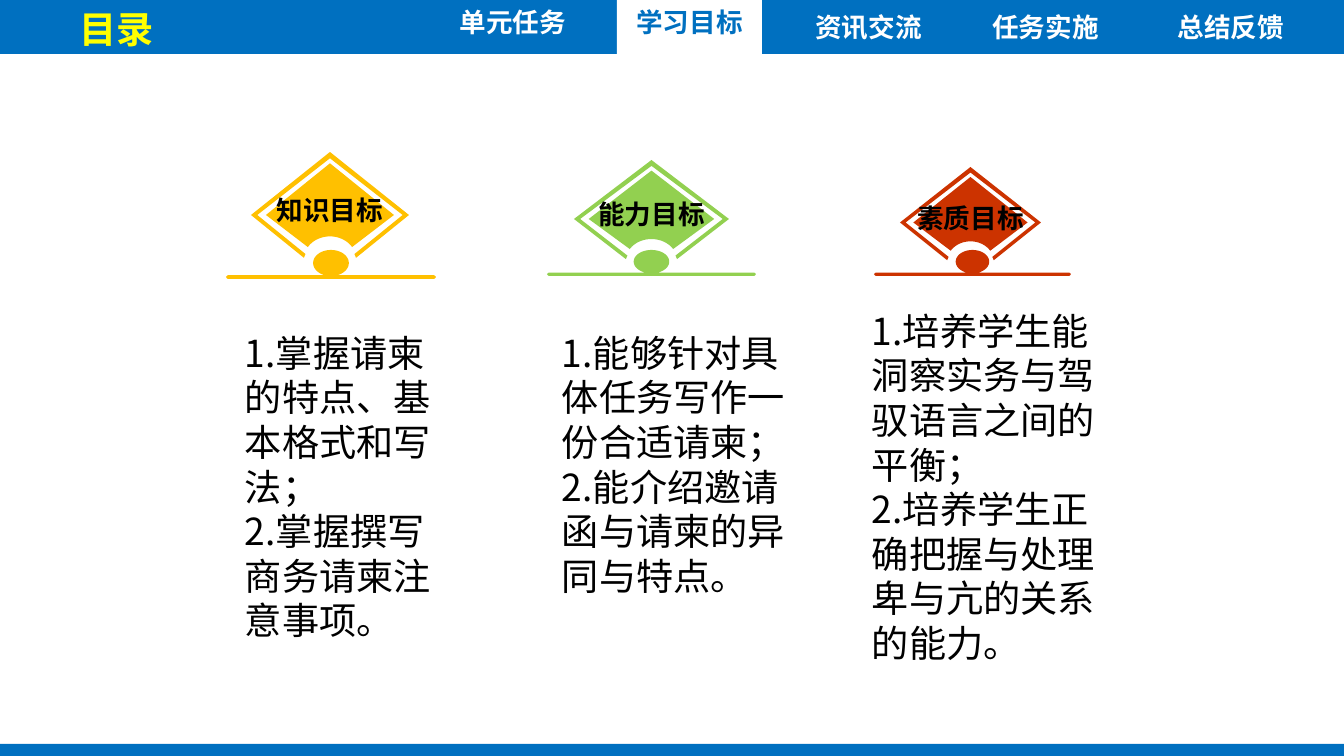
from math import cos, radians, sin

from lxml.etree import SubElement
from pptx import Presentation
from pptx.dml.color import RGBColor
from pptx.enum.shapes import MSO_SHAPE
from pptx.enum.text import MSO_ANCHOR, PP_ALIGN
from pptx.oxml.ns import qn
from pptx.util import Pt

PX = 9565  # EMU in one px
WIDTH, HEIGHT = 1344, 756

BLUE = RGBColor(0x00, 0x70, 0xC0)
WHITE = RGBColor(0xFF, 0xFF, 0xFF)
BLACK = RGBColor(0x00, 0x00, 0x00)
YELLOW = RGBColor(0xFF, 0xFF, 0x00)
GOLD = RGBColor(0xFF, 0xC0, 0x00)
GREEN = RGBColor(0x92, 0xD0, 0x50)
RED = RGBColor(0xCC, 0x33, 0x00)

LATIN, HAN = "Arial", "Noto Sans CJK SC"
LABEL = {"name": LATIN, "size": Pt(20), "bold": True}
TITLE = {"name": HAN, "size": Pt(28), "bold": True}
BODY = {"name": HAN, "size": Pt(28), "bold": False}
PAD = (10, 5, 10, 5)


def arc(mid, rx, ry, first, last, step):
    """Points on an ellipse centred at (0, mid), angles in degrees."""
    angles = map(radians, range(first, last, step))
    return [(rx * cos(a), mid + ry * sin(a)) for a in angles]


def mirror(points):
    """Points followed by their reflection in the vertical axis."""
    return points + [(-x, y) for x, y in reversed(points)]


# Outlines: x runs from -1 to 1 about the centre, y from 0 to 1 downwards.
FOOT = [(0, 1), (0, 1)]
CORE = [(0, 0.09), (0.81, 0.5), *arc(0.85, 0.33, 0.18, -32, -149, -4),
        (-0.81, 0.5)]
FRAME = [(0, 0), (1, 0.5), (0.33, 0.84), (0.31, 0.81), (0.92, 0.5),
         (0, 0.05), (-0.92, 0.5), (-0.31, 0.81), (-0.33, 0.84), (-1, 0.5)]
BADGE = [FOOT, CORE, FRAME]
BAR = mirror([(0.98, 0.87), (0.99, 0.89), (1, 0.93), (0.99, 0.98), (0.98, 1)])
STAND = [BAR + arc(0.45, 0.17, 0.45, -249, 70, 6)]


class Board:
    def __init__(self, deck):
        self.shapes = deck.slides.add_slide(deck.slide_layouts[6]).shapes

    def paint(self, shape, color):
        shape.shadow.inherit = False
        shape.fill.solid()
        shape.fill.fore_color.rgb = color
        shape.line.fill.background()
        return shape

    def bar(self, box, color):
        place = [v * PX for v in box]
        shape = self.shapes.add_shape(MSO_SHAPE.RECTANGLE, *place)
        return self.paint(shape, color)

    def emblem(self, box, loops, color):
        """Draw unit outlines stretched to fill the box."""
        left, top, wide, high = box

        def fit(loop):
            return [(round((left + wide * (1 + x) / 2) * PX),
                     round((top + high * y) * PX)) for x, y in loop]

        first, *rest = map(fit, loops)
        pen = self.shapes.build_freeform(*first[0], scale=1.0)
        pen.add_line_segments(first[1:], close=True)
        for loop in rest:
            pen.move_to(*loop[0])
            pen.add_line_segments(loop[1:], close=True)
        return self.paint(pen.convert_to_shape(), color)

    def box(self, box):
        return self.shapes.add_textbox(*[v * PX for v in box])

    def text(self, shape, lines, style, color, align=PP_ALIGN.LEFT,
             anchor=MSO_ANCHOR.MIDDLE, pad=PAD, space=None):
        frame = shape.text_frame
        sides = ("left", "top", "right", "bottom")
        form = {f"margin_{s}": v * PX for s, v in zip(sides, pad)}
        form |= {"word_wrap": True, "vertical_anchor": anchor}
        for key, value in form.items():
            setattr(frame, key, value)
        for i, line in enumerate(lines):
            para = frame.add_paragraph() if i else frame.paragraphs[0]
            para.alignment, para.line_spacing = align, space
            run = para.add_run()
            run.text = line
            for key, value in style.items():
                setattr(run.font, key, value)
            run.font.color.rgb = color
            props = run._r.get_or_add_rPr()
            SubElement(props, qn("a:ea"), typeface=HAN)


HEADS = [("资讯交流", 789, 159), ("任务实施", 966, 159), ("总结反馈", 1161, 140)]
TABS = [("学习目标", 617, 145, WHITE, BLUE), ("单元任务", 446, 134, BLUE, WHITE)]
GOALS = [
    ("知识目标", GOLD, (251, 152, 158, 126), (226, 250, 210, 29),
     (235, 325, 210, 147),
     ["1.掌握请柬的特点、基本格式和写法；", "2.掌握撰写商务请柬注意事项。"]),
    ("能力目标", GREEN, (574, 160, 155, 118), (547, 250, 209, 26),
     (552, 325, 256, 160),
     ["1.能够针对具体任务写作一份合适请柬；", "2.能介绍邀请函与请柬的异同与特点。"]),
    ("素质目标", RED, (900, 167, 141, 111), (874, 250, 197, 26),
     (862, 303, 253, 147),
     ["1.培养学生能洞察实务与驾驭语言之间的平衡；",
      "2.培养学生正确把握与处理卑与亢的关系的能力。"]),
]


def main():
    deck = Presentation()
    deck.slide_width, deck.slide_height = WIDTH * PX, HEIGHT * PX
    board = Board(deck)

    board.bar((0, 744, WIDTH, 12), BLUE)
    board.bar((0, 0, WIDTH, 54), BLUE)
    board.text(board.box((69, -10, 272, 64)), ["目录"], TITLE, YELLOW,
               space=1.3)
    for name, left, wide in HEADS:
        board.text(board.box((left, -10, wide, 64)), [name], LABEL, WHITE,
                   PP_ALIGN.CENTER, space=1.3)
    for name, left, wide, back, ink in TABS:
        board.text(board.bar((left, 0, wide, 54), back), [name], LABEL, ink,
                   PP_ALIGN.CENTER, space=Pt(16))

    for name, color, badge, stand, area, lines in GOALS:
        board.text(board.emblem(badge, BADGE, color), [name], LABEL, BLACK,
                   PP_ALIGN.CENTER, pad=(10, 5, 10, 15))
        board.emblem(stand, STAND, color)
        board.text(board.box(area), lines, BODY, BLACK,
                   anchor=MSO_ANCHOR.TOP)

    deck.save("out.pptx")


if __name__ == "__main__":
    main()
